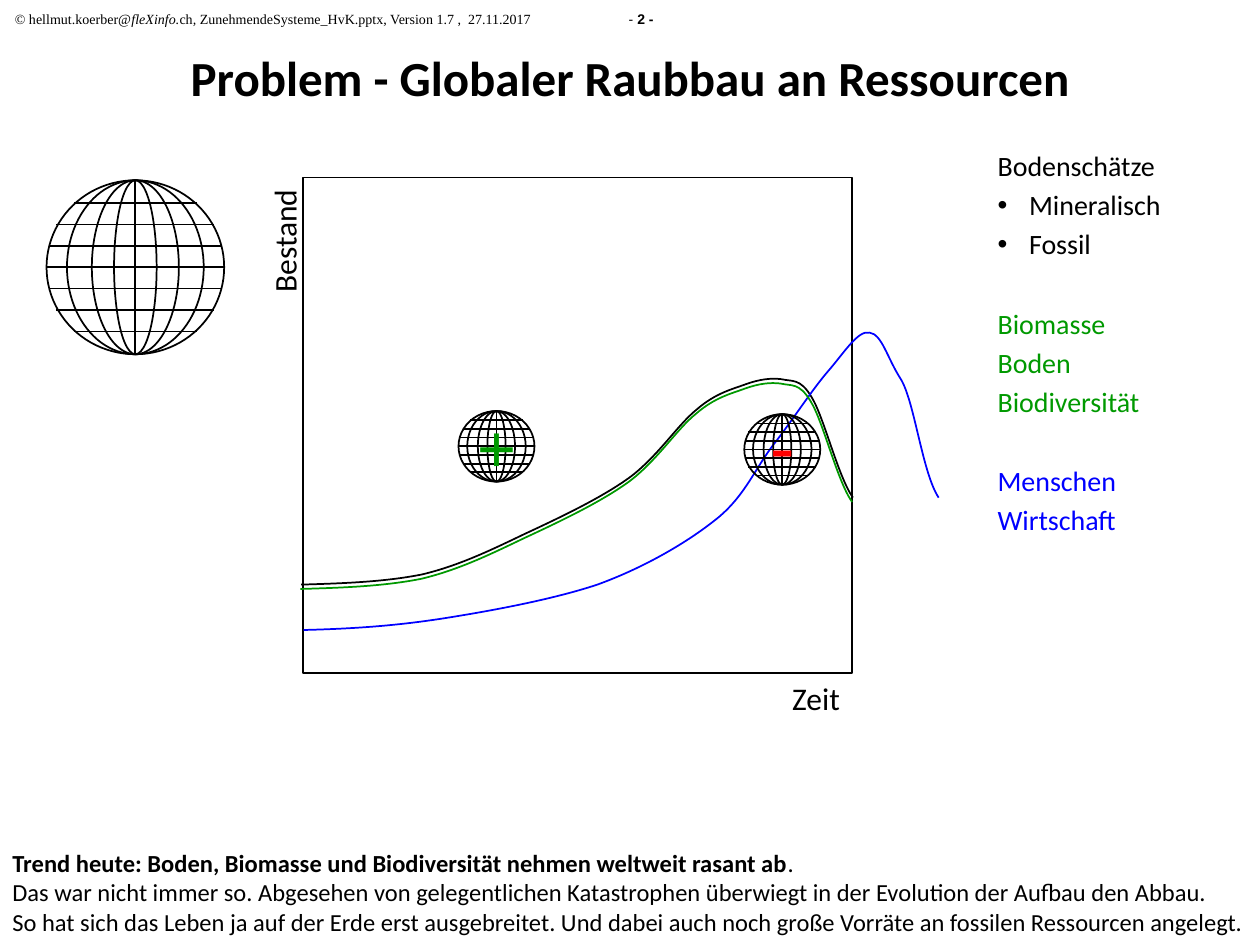
from lxml.etree import SubElement
from pptx import Presentation
from pptx.dml.color import RGBColor
from pptx.enum.shapes import MSO_CONNECTOR, MSO_SHAPE
from pptx.enum.text import MSO_ANCHOR, MSO_AUTO_SIZE, PP_ALIGN
from pptx.oxml.ns import qn
from pptx.util import Pt

BLACK, GREEN, BLUE, RED = "000000", "009900", "0000FF", "FF0000"
SERIF = "Times New Roman"

MERIDIAN_WIDTHS = (1, 0.77, 0.49, 0.24)
PARALLEL_WIDTHS = {-3: 0.69, -2: 0.89, -1: 0.97, 0: 1, 1: 0.97, 2: 0.89, 3: 0.69}
PARALLEL_GAP = 0.123

RESOURCE_CURVE = [
    (172.1, 334.1), (195.8, 333.4), (219.6, 332.6), (241.2, 328.3),
    (262.1, 323.3), (280.1, 314.6), (299.5, 305.3),
    (319.7, 295.9), (344.2, 284.4), (360.7, 272.2),
    (376.6, 259.9), (387.4, 242.6), (398.2, 234),
    (409, 224.6), (418.3, 222.5), (426.2, 219.6),
    (434.2, 216.7), (440.6, 216), (446.4, 216.7),
    (452.9, 218.2), (457.2, 216), (463.7, 226.8),
    (470.9, 238.3), (478.8, 272.2), (487.4, 284.4),
]
PEOPLE_CURVE = [
    (173.5, 360), (200.9, 359.3), (224.6, 357.8), (252.7, 353.5),
    (280.1, 349.2), (315.4, 342.7), (341.3, 334.1),
    (367.2, 324.7), (391, 311), (407.5, 298.1),
    (424.8, 285.1), (430.6, 269.3), (441.4, 254.9),
    (452.2, 241.2), (463.7, 223.2), (473, 212.4),
    (482.4, 201.6), (490.3, 188.6), (496.8, 190.1),
    (504, 190.8), (506.9, 204.5), (514.8, 216.7),
    (522.7, 229.7), (527, 270), (536.4, 284.4),
]
LEGEND = [
    ("Bodenschätze", BLACK, False, 0),
    ("Mineralisch", BLACK, True, 3.2),
    ("Fossil", BLACK, True, 3.2),
    ("Biomasse", GREEN, False, 26),
    ("Boden", GREEN, False, 3.2),
    ("Biodiversität", GREEN, False, 3.2),
    ("Menschen", BLUE, False, 26),
    ("Wirtschaft", BLUE, False, 3.2),
]


def color(value):
    return RGBColor.from_string(value)


def add_run(paragraph, text, size, ink=BLACK, bold=False, italic=False, face="Calibri"):
    run = paragraph.add_run()
    run.text = text
    run.font.name = face
    run.font.size = Pt(size)
    run.font.bold = bold
    run.font.italic = italic
    run.font.color.rgb = color(ink)


def add_text_frame(slide, left, top, width, height, rotation=0):
    box = slide.shapes.add_textbox(Pt(left), Pt(top), Pt(width), Pt(height))
    box.rotation = rotation
    box.text_frame.word_wrap = True
    return box.text_frame


def add_outline(shapes, preset, left, top, width, height, ink=BLACK):
    outline = shapes.add_shape(preset, Pt(left), Pt(top), Pt(width), Pt(height))
    outline.shadow.inherit = False
    outline.fill.background()
    if ink:
        outline.line.color.rgb = color(ink)
        outline.line.width = Pt(1)
    else:
        outline.line.fill.background()
    return outline


def add_line(shapes, x1, y1, x2, y2):
    line = shapes.add_connector(MSO_CONNECTOR.STRAIGHT, Pt(x1), Pt(y1), Pt(x2), Pt(y2))
    line.line.color.rgb = color(BLACK)
    line.line.width = Pt(1)
    SubElement(line._element.spPr, qn("a:effectLst"))


def add_globe(slide, left, top, width, height):
    globe = slide.shapes.add_group_shape().shapes
    center_x, center_y = left + width / 2, top + height / 2
    for share in MERIDIAN_WIDTHS:
        span = width * share
        add_outline(globe, MSO_SHAPE.OVAL, center_x - span / 2, top, span, height)
    add_line(globe, center_x, top, center_x, top + height)
    for step, share in PARALLEL_WIDTHS.items():
        y = center_y + step * PARALLEL_GAP * height
        half = width * share / 2
        add_line(globe, center_x - half, y, center_x + half, y)
    return globe


def add_sign(globe, sign, ink, left, top):
    badge = add_outline(globe, MSO_SHAPE.OVAL, left, top, 32.4, 32.4, None)
    frame = badge.text_frame
    frame.word_wrap = False
    frame.vertical_anchor = MSO_ANCHOR.MIDDLE
    frame.paragraphs[0].alignment = PP_ALIGN.CENTER
    add_run(frame.paragraphs[0], sign, 40, ink, bold=True, face=SERIF)


def add_curve(slide, points, ink):
    scaled = [(Pt(x), Pt(y)) for x, y in points]
    builder = slide.shapes.build_freeform(*scaled[0])
    builder.add_line_segments(scaled[1:], close=False)
    curve = builder.convert_to_shape()
    outline = next(curve._element.iter(qn("a:path")))
    segments = outline.findall(qn("a:lnTo"))
    for start in range(0, len(segments), 3):
        bezier = SubElement(outline, qn("a:cubicBezTo"))
        for segment in segments[start:start + 3]:
            bezier.append(segment[0])
            outline.remove(segment)
    curve.shadow.inherit = False
    curve.fill.background()
    curve.line.color.rgb = color(ink)
    curve.line.width = Pt(1)


def add_bullet(paragraph):
    properties = paragraph._p.get_or_add_pPr()
    properties.set("marL", str(Pt(18)))
    properties.set("indent", str(-Pt(18)))
    SubElement(properties, qn("a:buFont"), typeface="Arial")
    SubElement(properties, qn("a:buChar"), char="•")


def add_header(slide):
    header = add_text_frame(slide, 1.4, 2.2, 718, 16.6).paragraphs[0]
    tabs = SubElement(header._p.get_or_add_pPr(), qn("a:tabLst"))
    SubElement(tabs, qn("a:tab"), pos=str(Pt(350.8)), algn="l")
    add_run(header, "© hellmut.koerber@", 8, face=SERIF)
    add_run(header, "fleXinfo.", 8, italic=True, face=SERIF)
    add_run(header, "ch", 8, face=SERIF)
    add_run(header, ", ", 8, italic=True, face=SERIF)
    add_run(header, "ZunehmendeSysteme_HvK.pptx, Version 1.7 ,  27.11.2017\t", 8, face=SERIF)
    add_run(header, "- ", 8, face="Arial")
    add_run(header, "2 -", 8, bold=True, face="Arial")


def add_title(slide):
    title = slide.shapes.title
    title.left, title.top, title.width, title.height = Pt(36), Pt(19), Pt(648), Pt(50.4)
    frame = title.text_frame
    frame.auto_size = MSO_AUTO_SIZE.NONE
    frame.vertical_anchor = MSO_ANCHOR.MIDDLE
    frame.paragraphs[0].alignment = PP_ALIGN.CENTER
    add_run(frame.paragraphs[0], "Problem - Globaler Raubbau an Ressourcen", 28, bold=True)


def add_legend(slide):
    frame = add_text_frame(slide, 563, 81.4, 134, 324)
    for index, (label, ink, bulleted, gap) in enumerate(LEGEND):
        entry = frame.add_paragraph() if index else frame.paragraphs[0]
        entry.space_before = Pt(gap)
        if bulleted:
            add_bullet(entry)
        add_run(entry, label, 16, ink)


def add_axis_label(slide, label, left, top, width, height, rotation=0):
    axis = add_text_frame(slide, left, top, width, height, rotation).paragraphs[0]
    axis.alignment = PP_ALIGN.RIGHT
    add_run(axis, label, 18)


def add_conclusion(slide):
    frame = add_text_frame(slide, 0, 481, 720, 58.3)
    trend = frame.paragraphs[0]
    add_run(trend, "Trend heute: Boden, Biomasse und Biodiversität nehmen weltweit rasant ab", 14, bold=True)
    add_run(trend, ".", 14)
    history = frame.add_paragraph()
    add_run(history, "Das war nicht immer so. Abgesehen von gelegentlichen Katastrophen "
                     "überwiegt in der Evolution der Aufbau den Abbau.", 14)
    history.add_line_break()
    add_run(history, "So hat sich das Leben ja auf der Erde erst ausgebreitet. Und dabei auch "
                     "noch große Vorräte an fossilen Ressourcen angelegt.", 14)


def main():
    deck = Presentation()
    deck.slide_width, deck.slide_height = Pt(720), Pt(540)
    slide = deck.slides.add_slide(deck.slide_layouts[5])
    add_header(slide)
    add_title(slide)
    add_globe(slide, 26.6, 103, 101.5, 99.4)
    add_outline(slide.shapes, MSO_SHAPE.RECTANGLE, 173, 101.5, 314, 283)
    add_curve(slide, RESOURCE_CURVE, BLACK)
    add_curve(slide, PEOPLE_CURVE, BLUE)
    growth = add_globe(slide, 262, 234.9, 43.4, 40.3)
    add_sign(growth, "+", GREEN, 267.5, 238.5)
    decline = add_globe(slide, 425.3, 236.7, 43.4, 40.3)
    add_sign(decline, "-", RED, 430.8, 236.5)
    add_legend(slide)
    add_axis_label(slide, "Zeit", 417, 384.5, 70, 29)
    add_axis_label(slide, "Bestand", 124.6, 124.6, 75.6, 28.8, 270)
    add_curve(slide, [(x - 0.5, y + 2.5) for x, y in RESOURCE_CURVE], GREEN)
    add_conclusion(slide)
    deck.save("out.pptx")


if __name__ == "__main__":
    main()
